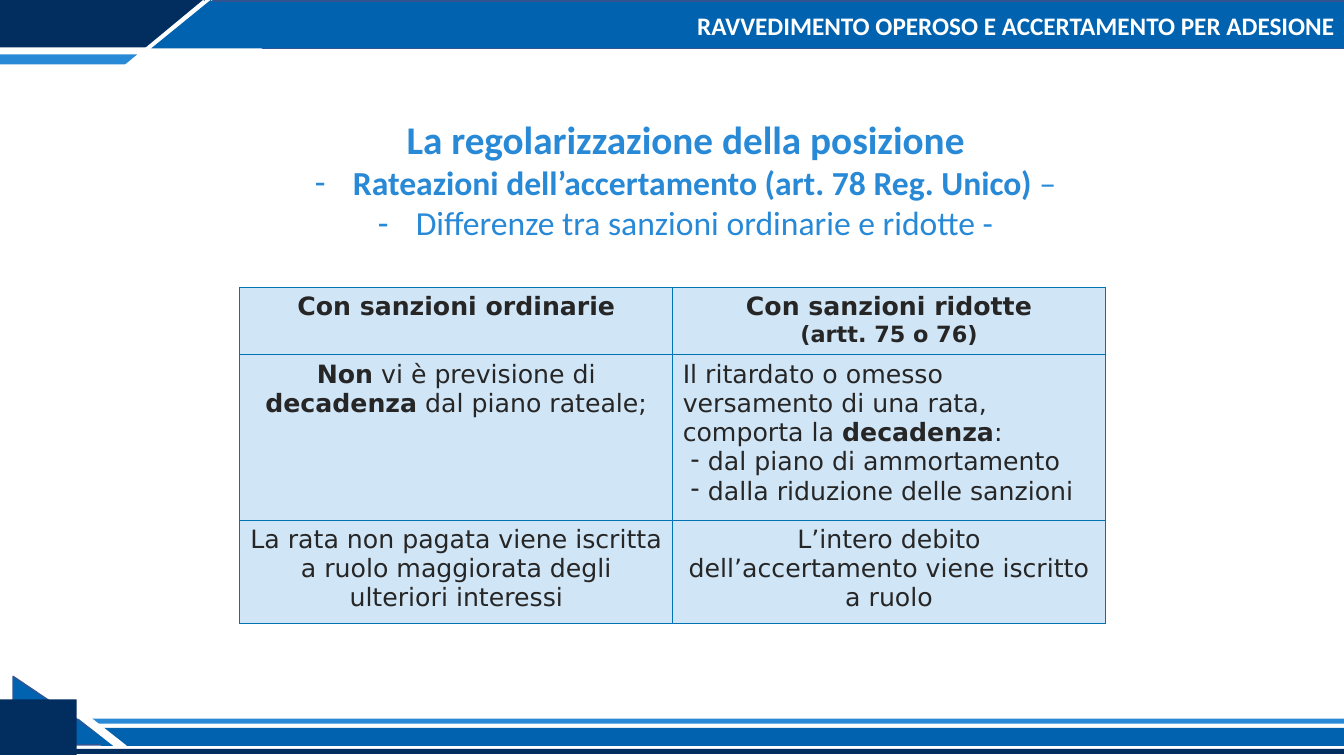
import pptx
import pptx.util
import pptx.dml.color
import pptx.enum.shapes
import pptx.enum.text
import pptx.oxml
import pptx.oxml.ns

WIDTH, HEIGHT = pptx.util.Inches(13.33), pptx.util.Inches(7.5)
COLORS = {
    "navy": "022E5F", "blue": "0162AF", "sky": "2889D6", "edge": "325491",
    "white": "FFFFFF", "ink": "262626", "cell": "D0E5F6", "grid": "0073B2",
}
HEADING_FONT, TABLE_FONT = "Calibri", "DejaVu Sans"
ALIGN = pptx.enum.text.PP_ALIGN
ANCHOR = pptx.enum.text.MSO_ANCHOR
KIND = pptx.enum.shapes.MSO_SHAPE

# Text: a paragraph is (size, alignment, dash indent or None, [(text, bold), ...])
HEADING = [
    (28, ALIGN.CENTER, None, [("La regolarizzazione della posizione", True)]),
    (24, ALIGN.CENTER, 0.38, [("Rateazioni dell’accertamento (art. 78 Reg. Unico) ", True),
                              ("–", False)]),
    (24, ALIGN.CENTER, 0.38, [("Differenze tra sanzioni ordinarie e ridotte -", False)]),
]
COMPARISON = [
    [
        [(18, ALIGN.CENTER, None, [("Con sanzioni ordinarie", True)])],
        [(18, ALIGN.CENTER, None, [("Con sanzioni ridotte", True)]),
         (16, ALIGN.CENTER, None, [("(artt. 75 o 76)", True)])],
    ],
    [
        [(18, ALIGN.CENTER, None, [("Non", True), (" vi è previsione di ", False),
                                   ("decadenza", True), (" dal piano rateale;", False)])],
        [(18, ALIGN.LEFT, None, [("Il ritardato o omesso versamento di una rata, comporta la ", False),
                                 ("decadenza", True), (":", False)]),
         (18, ALIGN.LEFT, 0.17, [("dal piano di ammortamento", False)]),
         (18, ALIGN.LEFT, 0.17, [("dalla riduzione delle sanzioni", False)])],
    ],
    [
        [(18, ALIGN.CENTER, None, [("La rata non pagata viene iscritta a ruolo maggiorata "
                                    "degli ulteriori interessi", False)])],
        [(18, ALIGN.CENTER, None, [("L’intero debito dell’accertamento viene iscritto "
                                    "a ruolo", False)])],
    ],
]


def across(percent):
    return round(WIDTH * percent / 100)


def down(percent):
    return round(HEIGHT * percent / 100)


def area(left, top, width, height):
    return across(left), down(top), across(width), down(height)


def rgb(name):
    return pptx.dml.color.RGBColor.from_string(COLORS[name])


def add_block(slide, kind, box, fill, line=None):
    block = slide.shapes.add_shape(kind, *area(*box))
    block.shadow.inherit = False
    block.fill.solid()
    block.fill.fore_color.rgb = rgb(fill)
    if line:
        block.line.color.rgb = rgb(line)
        block.line.width = pptx.util.Pt(1)
    else:
        block.line.fill.background()


def add_stripe(slide, start, end, color, width):
    stripe = slide.shapes.add_connector(
        pptx.enum.shapes.MSO_CONNECTOR.STRAIGHT,
        across(start[0]), down(start[1]), across(end[0]), down(end[1]))
    stripe.line.color.rgb = rgb(color)
    stripe.line.width = pptx.util.Pt(width)
    pptx.oxml.ns.qn("a:effectLst")
    stripe._element.spPr.append(pptx.oxml.parse_xml(
        f'<a:effectLst {pptx.oxml.ns.nsdecls("a")}/>'))


def set_dash(paragraph, indent, lead):
    """Hang a dash bullet, or switch bullets off when there is no indent."""
    props = paragraph._p.get_or_add_pPr()
    hang = pptx.util.Inches(indent or 0)
    props.set("marL", str(hang + pptx.util.Inches(lead if indent else 0)))
    props.set("indent", str(-hang))
    bullet = 'buChar char="-"' if indent else "buNone"
    props.append(pptx.oxml.parse_xml(f'<a:{bullet} {pptx.oxml.ns.nsdecls("a")}/>'))


def write(frame, paragraphs, font, color, lead=0):
    for index, (size, alignment, indent, pieces) in enumerate(paragraphs):
        paragraph = frame.add_paragraph() if index else frame.paragraphs[0]
        paragraph.alignment = alignment
        paragraph.space_before = pptx.util.Pt(0)
        set_dash(paragraph, indent, lead)
        for text, bold in pieces:
            run = paragraph.add_run()
            run.text = text
            run.font.name, run.font.bold = font, bold
            run.font.size = pptx.util.Pt(size)
            run.font.color.rgb = rgb(color)


def fill_placeholder(slide, holder, box, paragraphs, color, anchor):
    holder.left, holder.top, holder.width, holder.height = area(*box)
    frame = holder.text_frame
    frame.word_wrap = True
    frame.auto_size = pptx.enum.text.MSO_AUTO_SIZE.NONE
    frame.vertical_anchor = anchor
    write(frame, paragraphs, HEADING_FONT, color)
    # Bring the text in front of the decoration
    slide.shapes._spTree.append(holder._element)


def set_borders(cell, color, width):
    props = cell._tc.get_or_add_tcPr()
    for index, side in enumerate("LRTB"):
        props.insert(index, pptx.oxml.parse_xml(
            f'<a:ln{side} {pptx.oxml.ns.nsdecls("a")} w="{pptx.util.Pt(width)}">'
            f'<a:solidFill><a:srgbClr val="{COLORS[color]}"/></a:solidFill></a:ln{side}>'))


def add_comparison(slide, box, row_heights):
    table = slide.shapes.add_table(len(COMPARISON), 2, *area(*box)).table
    table.first_row = table.horz_banding = False
    for column in table.columns:
        column.width = across(box[2] / 2)
    for row, height, contents in zip(table.rows, row_heights, COMPARISON):
        row.height = down(height)
        for cell, paragraphs in zip(row.cells, contents):
            cell.fill.solid()
            cell.fill.fore_color.rgb = rgb("cell")
            set_borders(cell, "grid", 0.75)
            write(cell.text_frame, paragraphs, TABLE_FONT, "ink", lead=0.08)


def add_header(slide):
    add_block(slide, KIND.RECTANGLE, (15.83, 0.13, 84.2, 6.27), "blue", "edge")
    add_block(slide, KIND.RECTANGLE, (0, 7.2, 10.2, 1.33), "sky")
    add_block(slide, KIND.RECTANGLE, (0, 0, 15.23, 6.27), "navy")
    add_block(slide, KIND.ISOSCELES_TRIANGLE, (9.23, 0, 11.78, 8.67), "white")
    add_block(slide, KIND.ISOSCELES_TRIANGLE, (11.25, 0, 8.85, 6.4), "blue")


def add_footer(slide):
    add_block(slide, KIND.RECTANGLE, (5.7, 95.07, 94.3, 0.67), "sky")
    add_block(slide, KIND.RIGHT_TRIANGLE, (0.98, 89.47, 7.58, 9.07), "blue", "edge")
    add_block(slide, KIND.RECTANGLE, (7.5, 96.27, 92.5, 2.4), "blue")
    add_stripe(slide, (9.23, 99.07), (5.7, 94.13), "white", 6)
    add_block(slide, KIND.RECTANGLE, (0, 92.53, 5.7, 7.33), "navy")
    add_block(slide, KIND.RECTANGLE, (4.88, 99.07, 95.12, 0.67), "navy")


def main():
    deck = pptx.Presentation()
    deck.slide_width, deck.slide_height = WIDTH, HEIGHT
    slide = deck.slides.add_slide(deck.slide_layouts[1])
    title, heading = slide.placeholders

    # Decoration
    add_header(slide)
    add_footer(slide)

    # Title, heading list and comparison
    banner = [(18, ALIGN.RIGHT, None,
               [("RAVVEDIMENTO OPEROSO E ACCERTAMENTO PER ADESIONE", True)])]
    fill_placeholder(slide, title, (14.85, 0.53, 85.2, 6.27), banner, "white", ANCHOR.MIDDLE)
    title.text_frame.paragraphs[0].line_spacing = 0.9
    fill_placeholder(slide, heading, (7.8, 14.53, 86.4, 18.4), HEADING, "sky", ANCHOR.TOP)
    add_comparison(slide, (17.85, 38, 64.4, 44.53), (8.93, 21.87, 13.73))

    deck.save("out.pptx")


if __name__ == "__main__":
    main()
